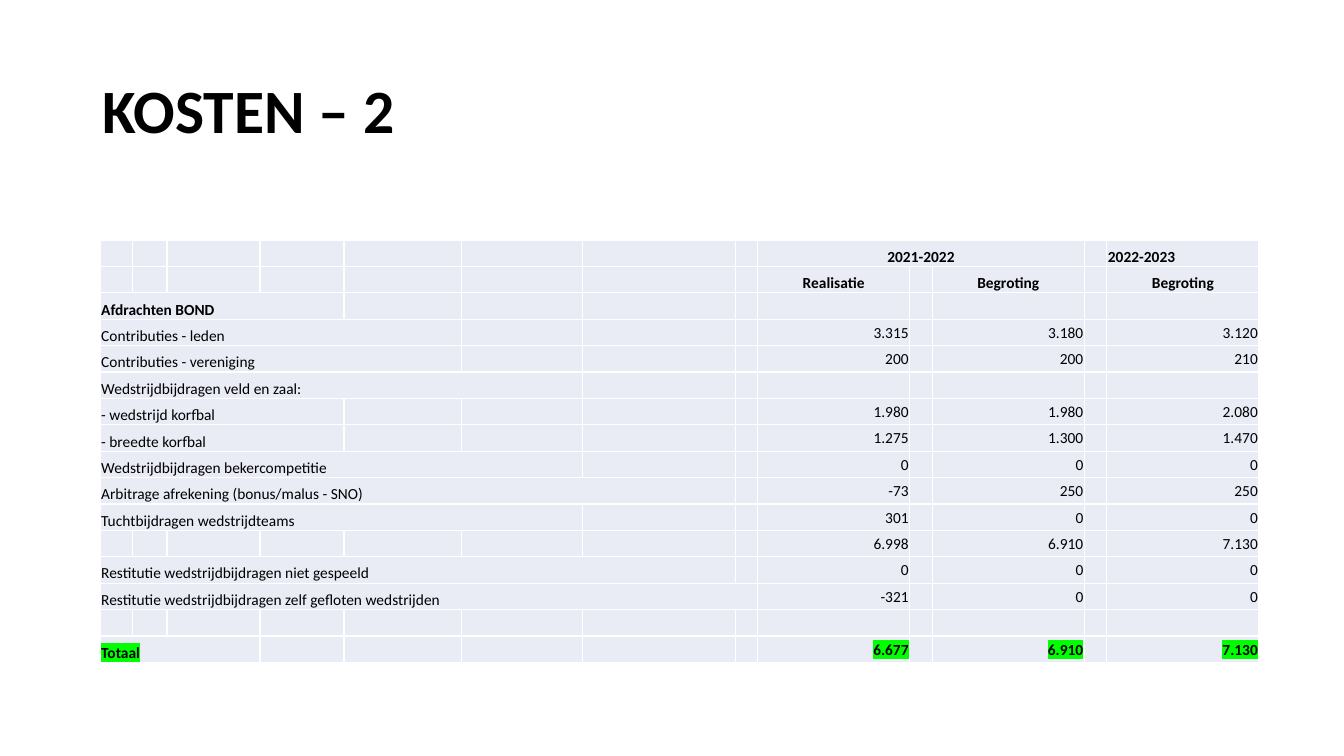
from dataclasses import dataclass

from lxml.etree import SubElement
from pptx import Presentation
from pptx.dml.color import RGBColor
from pptx.enum.text import MSO_ANCHOR as Anchor, MSO_AUTO_SIZE as AutoSize, PP_ALIGN as Align
from pptx.oxml.ns import qn
from pptx.util import Cm, Pt


@dataclass(frozen=True)
class Theme:
    font: str = "Calibri"
    ink: str = "000000"
    cell: str = "E9EBF5"
    highlight: str = "00FF00"
    title_size: int = 44
    table_size: int = 11


COLUMN_WIDTHS = [0.81, 0.88, 2.34, 2.12, 2.97, 3.04, 3.86, 0.55, 3.84, 0.56, 3.84, 0.56, 3.84]
TABLE_HEIGHT = 10.64
AMOUNT_COLUMNS = (8, 10, 12)
HEADER_ROWS = 2
COSTS = [
    ("Afdrachten BOND", 4, ()),
    ("Contributies - leden", 5, ("3.315", "3.180", "3.120")),
    ("Contributies - vereniging", 5, ("200", "200", "210")),
    ("Wedstrijdbijdragen veld en zaal:", 6, ()),
    ("- wedstrijd korfbal", 4, ("1.980", "1.980", "2.080")),
    ("- breedte korfbal", 4, ("1.275", "1.300", "1.470")),
    ("Wedstrijdbijdragen bekercompetitie", 6, ("0", "0", "0")),
    ("Arbitrage afrekening (bonus/malus - SNO)", 7, ("-73", "250", "250")),
    ("Tuchtbijdragen wedstrijdteams", 6, ("301", "0", "0")),
    ("", 1, ("6.998", "6.910", "7.130")),
    ("Restitutie wedstrijdbijdragen niet gespeeld", 7, ("0", "0", "0")),
    ("Restitutie wedstrijdbijdragen zelf gefloten wedstrijden", 8, ("-321", "0", "0")),
    ("", 1, ()),
    ("Totaal", 3, ("6.677", "6.910", "7.130")),
]


class SlideBuilder:
    def __init__(self, slide, theme):
        self.slide = slide
        self.theme = theme

    def style(self, paragraph, size, bold, align):
        paragraph.alignment = align
        font = paragraph.font
        font.name, font.size, font.bold = self.theme.font, Pt(size), bold
        font.color.rgb = RGBColor.from_string(self.theme.ink)

    def title(self, text, left, top, width, height):
        title = self.slide.shapes.title
        title.left, title.top, title.width, title.height = map(Cm, (left, top, width, height))
        frame = title.text_frame
        frame.text = text
        frame.auto_size = AutoSize.NONE
        frame.vertical_anchor = Anchor.MIDDLE
        heading = frame.paragraphs[0]
        heading.line_spacing = 0.9
        self.style(heading, self.theme.title_size, True, Align.LEFT)

    def table(self, left, top, widths, height, row_count):
        table = self.slide.shapes.add_table(
            row_count, len(widths), Cm(left), Cm(top), Cm(sum(widths)), Cm(height)).table
        table.first_row = table.horz_banding = False
        for column, width in zip(table.columns, widths):
            column.width = Cm(width)
        for row in table.rows:
            row.height = Cm(height / row_count)
        for cell in table.iter_cells():
            cell.fill.solid()
            cell.fill.fore_color.rgb = RGBColor.from_string(self.theme.cell)
            cell.margin_left = cell.margin_right = cell.margin_top = Cm(0.03)
            cell.margin_bottom = 0
            blank = cell.text_frame.paragraphs[0]
            SubElement(blank._p, qn("a:endParaRPr"), sz=str(self.theme.table_size * 100))
        return table

    def entry(self, cell, text, bold=False, align=Align.LEFT, anchor=Anchor.BOTTOM, marked=False):
        cell.vertical_anchor = anchor
        paragraph = cell.text_frame.paragraphs[0]
        run = paragraph.add_run()
        run.text = text
        self.style(paragraph, self.theme.table_size, bold, align)
        if marked:
            highlight = SubElement(run._r.get_or_add_rPr(), qn("a:highlight"))
            SubElement(highlight, qn("a:srgbClr"), val=self.theme.highlight)


def main():
    deck = Presentation()
    deck.slide_width, deck.slide_height = Cm(33.87), Cm(19.05)
    builder = SlideBuilder(deck.slides.add_slide(deck.slide_layouts[5]), Theme())
    builder.title("KOSTEN – 2", 2.33, 1.01, 29.21, 3.68)

    costs = builder.table(2.52, 6.05, COLUMN_WIDTHS, TABLE_HEIGHT, HEADER_ROWS + len(COSTS))
    first_amount, second_amount, last_amount = AMOUNT_COLUMNS
    costs.cell(0, first_amount).merge(costs.cell(0, second_amount))
    builder.entry(costs.cell(0, first_amount), "2021-2022", True, Align.CENTER)
    builder.entry(costs.cell(0, last_amount), "2022-2023", True)
    for column, heading in zip(AMOUNT_COLUMNS, ("Realisatie", "Begroting", "Begroting")):
        builder.entry(costs.cell(1, column), heading, True, Align.CENTER)

    for row, (label, span, amounts) in enumerate(COSTS, HEADER_ROWS):
        is_total = label == "Totaal"
        if label:
            costs.cell(row, 0).merge(costs.cell(row, span - 1))
            is_heading = row == HEADER_ROWS
            builder.entry(costs.cell(row, 0), label, is_total or is_heading, marked=is_total)
        for column, amount in zip(AMOUNT_COLUMNS, amounts):
            builder.entry(costs.cell(row, column), amount, is_total,
                          Align.RIGHT, Anchor.MIDDLE, is_total)

    deck.save("out.pptx")


if __name__ == "__main__":
    main()
